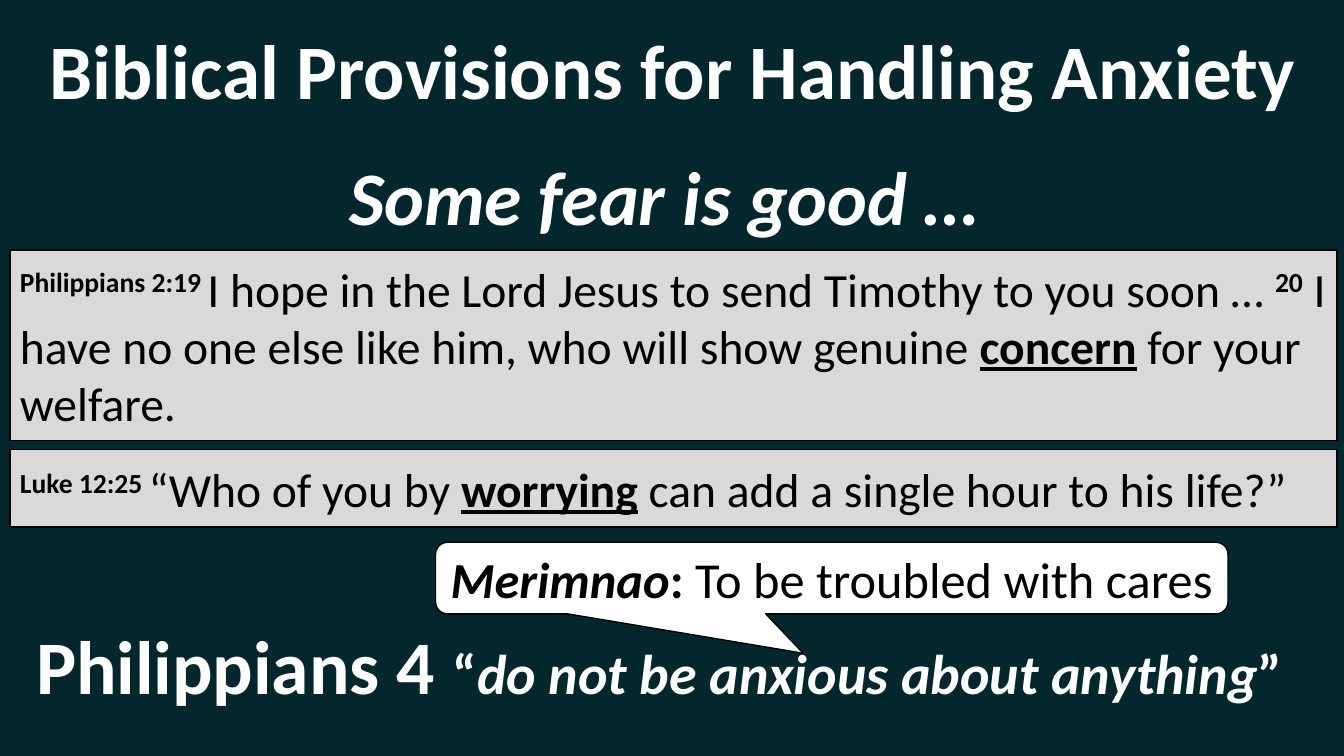
from lxml import etree
from pptx import Presentation
from pptx import util as u
from pptx.dml.color import RGBColor
from pptx.enum import shapes, text
from pptx.oxml import ns

COLORS = {"background": "03272D", "light": "FFFFFF", "dark": "000000", "verse": "D9D9D9"}
FONT = "Calibri"
MARGIN = 0.1
VERSE_WIDTH = 13.16


def rgb(name):
    """Return a named colour from the palette."""
    return RGBColor.from_string(COLORS[name])


def write(s, runs, size, color, align=text.PP_ALIGN.CENTER, anchor=text.MSO_ANCHOR.MIDDLE):
    """Write (wording, style, size) runs; style letters are b, i, u and ^ for raised."""
    tf = s.text_frame
    tf.word_wrap = True
    tf.auto_size = text.MSO_AUTO_SIZE.NONE
    tf.vertical_anchor = anchor
    tf.margin_left = tf.margin_right = u.Inches(0.1)
    tf.margin_top = tf.margin_bottom = u.Inches(0.05)
    p = tf.paragraphs[0]
    p.alignment = align
    for wording, style, *own_size in runs:
        r = p.add_run()
        r.text = wording
        r.font.name = FONT
        r.font.size = u.Pt(own_size[0] if own_size else size)
        r.font.color.rgb = rgb(color)
        r.font.bold = "b" in style
        r.font.italic = "i" in style
        r.font.underline = "u" in style
        if "^" in style:
            r.font._element.set("baseline", "30000")


def add_panel(slide, kind, box, fill):
    """Add a filled shape with a thin dark outline."""
    s = slide.shapes.add_shape(kind, *map(u.Inches, box))
    s.shadow.inherit = False
    s.fill.solid()
    s.fill.fore_color.rgb = rgb(fill)
    s.line.color.rgb = rgb("dark")
    s.line.width = u.Pt(1)
    return s


def add_title(slide, box, wording):
    """Place and format the title placeholder."""
    s = slide.shapes.title
    s.left, s.top, s.width, s.height = map(u.Inches, box)
    write(s, [(wording, "b")], 55, "light")


def add_line(slide, box, runs, anchor=text.MSO_ANCHOR.MIDDLE):
    """Add a large light line of text on the background."""
    s = slide.shapes.add_textbox(*map(u.Inches, box))
    write(s, runs, 54, "light", anchor=anchor)


def add_verse(slide, box, runs):
    """Add a Bible verse on a grey panel."""
    s = add_panel(slide, shapes.MSO_SHAPE.RECTANGLE, box, "verse")
    write(s, runs, 34, "dark", align=text.PP_ALIGN.LEFT)


def add_definition(slide, box, runs):
    """Add a speech bubble that points at the word it defines."""
    s = add_panel(slide, shapes.MSO_SHAPE.ROUNDED_RECTANGULAR_CALLOUT, box, "light")
    for i, value in enumerate((-0.036, 1.051, 0.167)):
        s.adjustments[i] = value
    write(s, runs, 36, "dark")


def build_slide(prs):
    """Build the slide on handling anxiety."""
    slide = prs.slides.add_slide(prs.slide_layouts[5])
    slide.background.fill.solid()
    slide.background.fill.fore_color.rgb = rgb("background")
    add_title(slide, (0.24, 0.22, 12.86, 0.92), "Biblical Provisions for Handling Anxiety")
    add_line(slide, (3.32, 1.47, 6.7, 0.93), [("Some fear is good … ", "bi")])
    add_verse(slide, (MARGIN, 2.48, VERSE_WIDTH, 1.89), [
        ("Philippians 2:19 ", "b^"),
        ("I hope in the Lord Jesus to send Timothy to you soon … ", ""),
        ("20", "b^"),
        (" I have no one else like him, who will show genuine ", ""),
        ("concern", "bu"),
        (" for your welfare.", ""),
    ])
    add_verse(slide, (MARGIN, 4.46, VERSE_WIDTH, 0.77), [
        ("Luke 12:25 ", "b^"),
        ("“Who of you by ", ""),
        ("worrying", "bu"),
        (" can add a single hour to his life?”", ""),
    ])
    add_line(slide, (0.24, 6.09, 12.72, 1.01), [
        ("Philippians 4 ", "b"),
        ("“", "b", 40),
        ("do not be anxious about anything", "bi", 40),
        ("” ", "b", 40),
    ], anchor=text.MSO_ANCHOR.TOP)
    add_definition(slide, (4.32, 5.38, 7.86, 0.71), [
        ("Merimnao", "bi"),
        (":", "b"),
        (" To be troubled with cares", ""),
    ])


def main():
    """Create and save the presentation."""
    prs = Presentation()
    prs.slide_width, prs.slide_height = u.Inches(13.33), u.Inches(7.5)
    build_slide(prs)
    prs.save("out.pptx")


if __name__ == "__main__":
    main()
